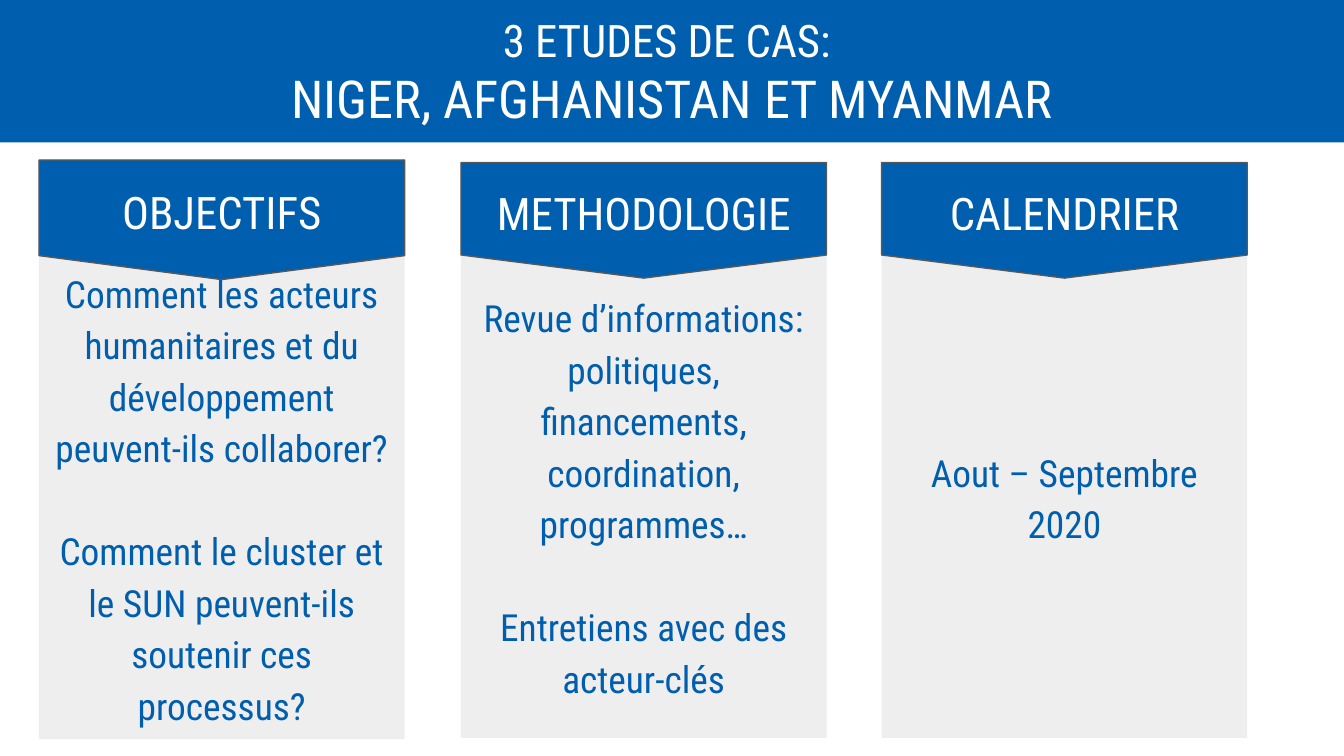
"""Build the slide on the three case studies: objectives, methodology, calendar."""
from pptx import Presentation
from pptx.dml.color import RGBColor
from pptx.enum.shapes import MSO_SHAPE
from pptx.enum.text import MSO_ANCHOR, PP_ALIGN
from pptx.util import Inches, Pt

BLUE = RGBColor(0x00, 0x5E, 0xAE)
GREY = RGBColor(0xEE, 0xEE, 0xEE)
DARK = RGBColor(0x59, 0x59, 0x59)
WHITE = RGBColor(0xFF, 0xFF, 0xFF)
FONT = "Roboto Condensed"


def add_box(kind, left, top, width, height, fill, line=None):
    sp = s.shapes.add_shape(kind, Inches(left), Inches(top), Inches(width), Inches(height))
    sp.shadow.inherit = False
    sp.fill.solid()
    sp.fill.fore_color.rgb = fill
    if line is None:
        sp.line.fill.background()
    else:
        sp.line.color.rgb = line
        sp.line.width = Pt(0.75)
    return sp


def add_text(sp, lines, sizes, color, spacing=1.0, gap=0):
    tf = sp.text_frame
    tf.word_wrap = True
    tf.vertical_anchor = MSO_ANCHOR.MIDDLE
    tf.margin_left = tf.margin_right = tf.margin_top = tf.margin_bottom = Inches(0.1)
    for i, (line, size) in enumerate(zip(lines, sizes)):
        p = tf.paragraphs[0] if i == 0 else tf.add_paragraph()
        p.text = line
        p.alignment = PP_ALIGN.CENTER
        p.line_spacing = spacing
        p.space_before = Pt(gap if i else 0)
        p.font.name = FONT
        p.font.size = Pt(size)
        p.font.color.rgb = color


prs = Presentation()
prs.slide_width = Inches(10)
prs.slide_height = Inches(10) * 9 // 16
s = prs.slides.add_slide(prs.slide_layouts[6])

columns = [
    (0.29, 1.88, 1.19, 0.89, "OBJECTIFS", [
        "Comment les acteurs humanitaires et du développement peuvent-ils collaborer?",
        "Comment le cluster et le SUN peuvent-ils soutenir ces processus?"]),
    (3.43, 1.87, 1.21, 0.86, "METHODOLOGIE", [
        "Revue d’informations: politiques, financements, coordination, programmes…",
        "Entretiens avec des acteur-clés"]),
    (6.56, 1.87, 1.21, 0.86, "CALENDRIER", ["Aout – Septembre 2020"]),
]
for left, body_top, head_top, head_height, title, lines in columns:
    body = add_box(MSO_SHAPE.RECTANGLE, left, body_top, 2.72, 3.62, GREY)
    add_text(body, lines, [20] * len(lines), BLUE, 1.15, 27.6)
    head = add_box(MSO_SHAPE.FLOWCHART_OFFPAGE_CONNECTOR, left, head_top, 2.72, head_height, BLUE, DARK)
    add_text(head, [title], [24], WHITE, 1.15)

banner = add_box(MSO_SHAPE.RECTANGLE, 0, 0, 10, 1.06, BLUE)
add_text(banner, ["3 ETUDES DE CAS: ", "NIGER, AFGHANISTAN ET MYANMAR"], [24, 28], WHITE)

prs.save("out.pptx")
